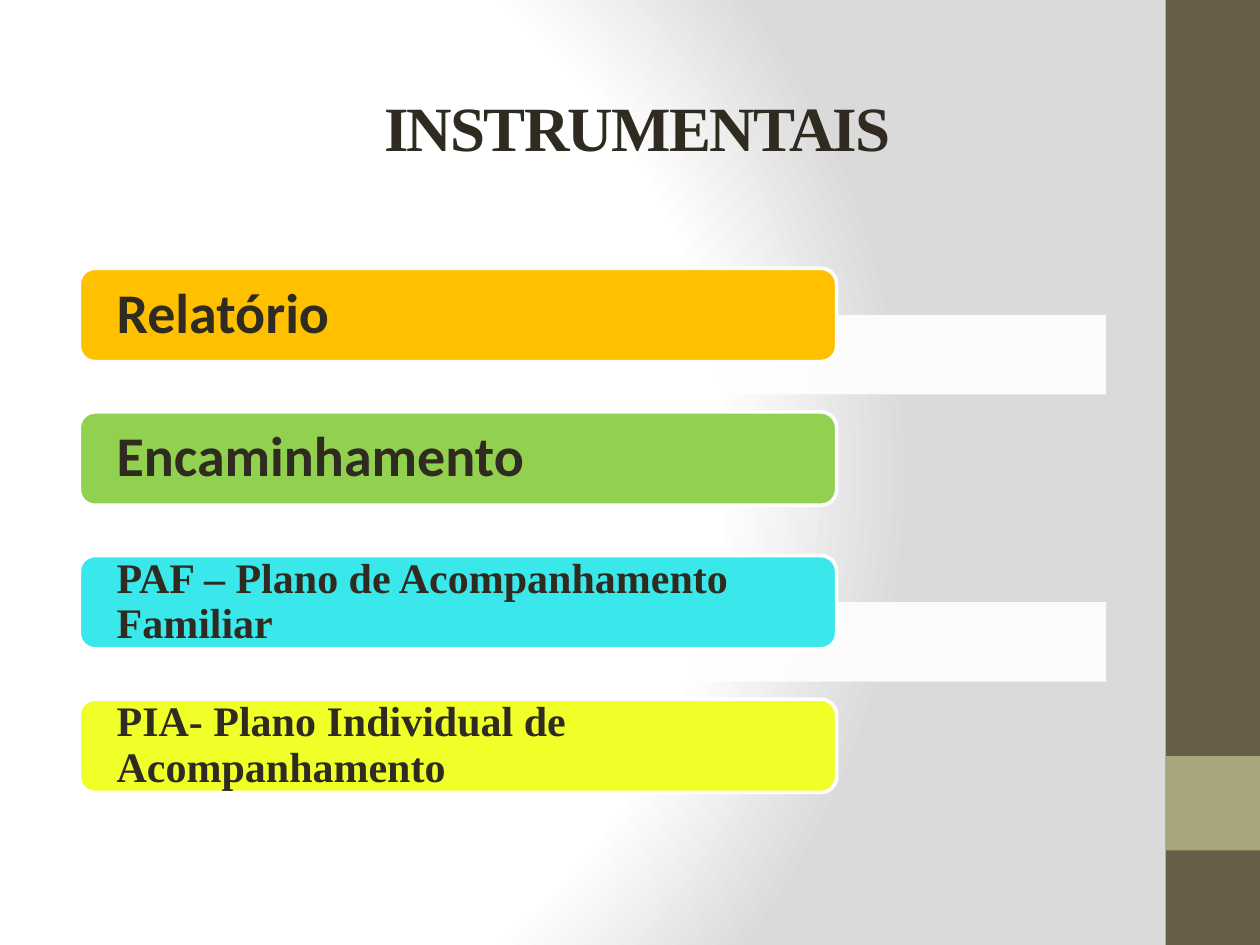
from lxml.etree import SubElement
from pptx import Presentation
from pptx.dml.color import RGBColor
from pptx.enum.shapes import MSO_SHAPE
from pptx.enum.text import MSO_ANCHOR, PP_ALIGN
from pptx.oxml import parse_xml
from pptx.oxml.ns import nsdecls, qn
from pptx.util import Inches, Pt

DARK = "2F2B20"
ITEMS = [
    ("Relatório", "FFC000", "Calibri", 32),
    ("Encaminhamento", "92D050", "Calibri", 32),
    ("PAF – Plano de Acompanhamento Familiar", "3AE8EC", "Times New Roman", 24),
    ("PIA- Plano Individual de Acompanhamento", "F0FF27", "Times New Roman", 24),
]
TOP, STEP = 2.13, 1.14


def paint(color, value):
    color.rgb = RGBColor.from_string(value)


def set_back(slide):
    """Circular gradient, white to grey."""
    slide.background.fill.solid()
    solid = slide.element.find(".//" + qn("a:solidFill"))
    stops = "".join(
        f'<a:gs pos="{pos * 1000}"><a:srgbClr val="{value}"/></a:gs>'
        for pos, value in [(0, "FFFFFF"), (75, "FFFFFF"), (100, "DADADA")])
    grad = parse_xml(
        f'<a:gradFill {nsdecls("a")} rotWithShape="1"><a:gsLst>{stops}</a:gsLst>'
        '<a:path path="circle"><a:fillToRect l="20000" t="50000" r="100000" '
        'b="50000"/></a:path></a:gradFill>')
    solid.getparent().replace(solid, grad)


def add_box(slide, box, fill, kind=MSO_SHAPE.RECTANGLE, alpha=None):
    shape = slide.shapes.add_shape(kind, *map(Inches, box))
    shape.shadow.inherit = False
    shape.fill.solid()
    paint(shape.fill.fore_color, fill)
    shape.line.fill.background()
    if alpha is not None:
        color = shape.element.spPr.find(".//" + qn("a:srgbClr"))
        SubElement(color, qn("a:alpha"), val=str(alpha * 1000))
    return shape


def write(shape, text, face, size, align, **frame):
    body = shape.text_frame
    look = {"word_wrap": True, "vertical_anchor": MSO_ANCHOR.MIDDLE, **frame}
    for name, value in look.items():
        setattr(body, name, value)
    para = body.paragraphs[0]
    para.alignment = align
    run = para.add_run()
    run.text = text
    for name, value in {"name": face, "size": Pt(size), "bold": True}.items():
        setattr(run.font, name, value)
    paint(run.font.color, DARK)
    return para


def add_title(slide, text):
    title = slide.shapes.title
    place = {"left": 0.5, "top": 0.3, "width": 9, "height": 1.26}
    for name, value in place.items():
        setattr(title, name, Inches(value))
    para = write(title, text, "Times New Roman", 36, PP_ALIGN.CENTER,
                 margin_left=Inches(0.22), margin_top=Inches(0.2))
    para.runs[0].font._element.set("spc", "-100")


def add_item(slide, top, text, fill, face, size):
    card = add_box(slide, (0.63, top, 6.01, 0.74), fill,
                   MSO_SHAPE.ROUNDED_RECTANGLE)
    paint(card.line.color, "FFFFFF")
    card.line.width = Pt(2)
    para = write(card, text, face, size, PP_ALIGN.LEFT,
                 margin_left=Inches(0.26), margin_right=Inches(0.26),
                 margin_top=0, margin_bottom=0)
    para.line_spacing = 0.9


def main():
    deck = Presentation()
    deck.slide_width, deck.slide_height = Inches(10), Inches(7.5)
    slide = deck.slides.add_slide(deck.slide_layouts[5])
    set_back(slide)

    # Side band
    add_box(slide, (9.25, 0, 0.75, 7.5), "675E47")
    add_box(slide, (9.25, 6, 0.75, 0.75), "A9A57C")

    add_title(slide, "INSTRUMENTAIS")

    # Cards, every other one over a pale strip
    for i, item in enumerate(ITEMS):
        top = TOP + i * STEP
        if i % 2 == 0:
            add_box(slide, (0.2, top + 0.37, 8.58, 0.63), "FFFFFF", alpha=90)
        add_item(slide, top, *item)

    deck.save("out.pptx")


if __name__ == "__main__":
    main()
